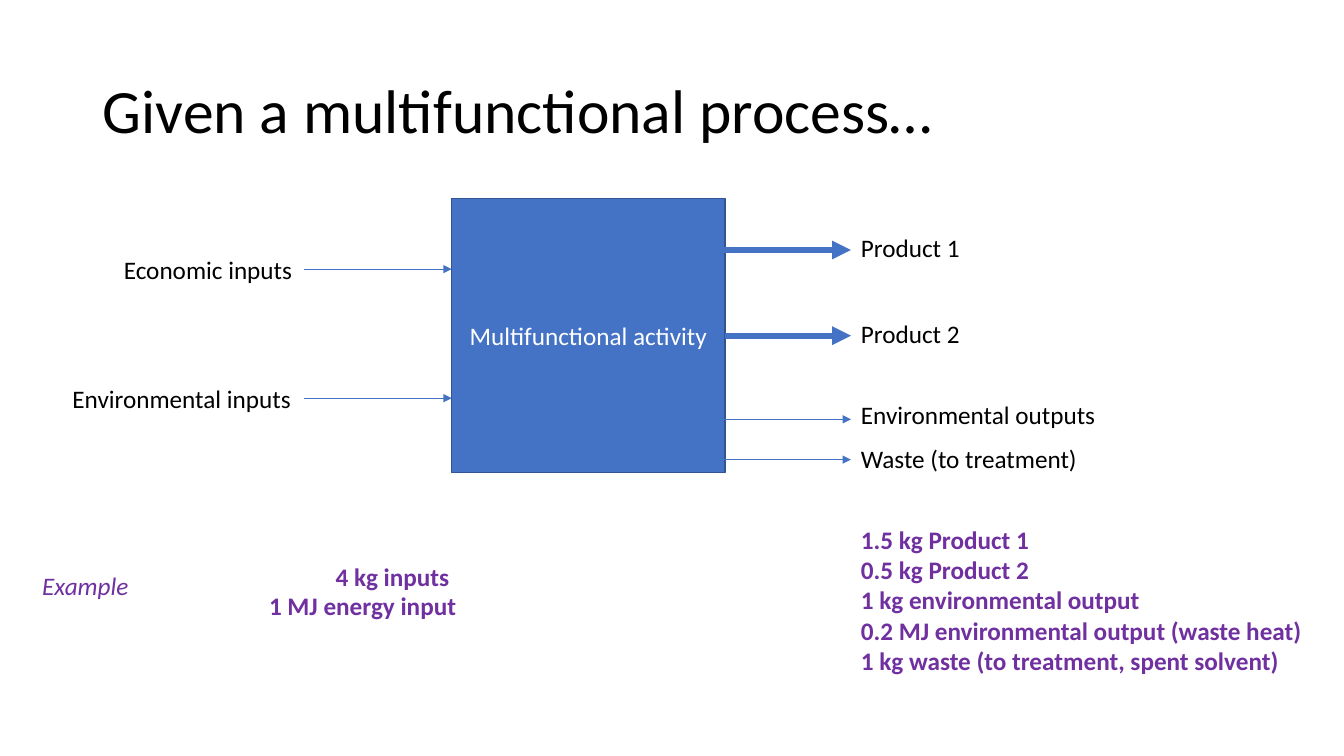
from lxml import etree
from pptx import Presentation
from pptx.dml.color import RGBColor
from pptx.enum.shapes import MSO_CONNECTOR, MSO_SHAPE
from pptx.enum.text import MSO_ANCHOR, MSO_AUTO_SIZE, PP_ALIGN
from pptx.oxml.ns import qn
from pptx.util import Inches, Pt

BLACK = RGBColor(0x00, 0x00, 0x00)
WHITE = RGBColor(0xFF, 0xFF, 0xFF)
BLUE = RGBColor(0x44, 0x72, 0xC4)
DARK_BLUE = RGBColor(0x32, 0x54, 0x91)
PURPLE = RGBColor(0x70, 0x30, 0xA0)
FONT = "Calibri"

prs = Presentation()
prs.slide_width, prs.slide_height = Inches(13.33), Inches(7.5)
s = prs.slides.add_slide(prs.slide_layouts[5])


def set_font(p, color, size=18, bold=False, italic=False):
    f = p.font
    f.name, f.size, f.bold, f.italic = FONT, Pt(size), bold, italic
    f.color.rgb = color


def add_label(lines, x, y, w, color=BLACK, wrap=True, bold=False, italic=False):
    height = 0.4 + 0.305 * (len(lines) - 1)
    tb = s.shapes.add_textbox(Inches(x), Inches(y), Inches(w), Inches(height))
    tf = tb.text_frame
    tf.word_wrap = wrap
    tf.auto_size = MSO_AUTO_SIZE.SHAPE_TO_FIT_TEXT
    tf.text = "\n".join(lines)
    for p in tf.paragraphs:
        set_font(p, color, bold=bold, italic=italic)


# Title
title = s.shapes.title
title.left, title.top = Inches(0.92), Inches(0.4)
title.width, title.height = Inches(11.5), Inches(1.45)
tf = title.text_frame
tf.text = "Given a multifunctional process…"
tf.word_wrap = True
tf.auto_size = MSO_AUTO_SIZE.NONE
tf.vertical_anchor = MSO_ANCHOR.MIDDLE
p = tf.paragraphs[0]
p.alignment = PP_ALIGN.LEFT
p.line_spacing = 0.9
set_font(p, BLACK, size=44)

# Activity box
box = s.shapes.add_shape(MSO_SHAPE.RECTANGLE, Inches(4.48), Inches(1.97),
                         Inches(2.71), Inches(2.72))
box.shadow.inherit = False
box.fill.solid()
box.fill.fore_color.rgb = BLUE
box.line.color.rgb = DARK_BLUE
box.line.width = Pt(1)
tf = box.text_frame
tf.word_wrap = True
tf.vertical_anchor = MSO_ANCHOR.MIDDLE
tf.text = "Multifunctional activity"
p = tf.paragraphs[0]
p.alignment = PP_ALIGN.CENTER
set_font(p, WHITE)

# Flow arrows: inputs on the left, products (thick) and outputs on the right
IN_X, OUT_X = (3.02, 4.48), (7.14, 8.44)
PRODUCT_2_Y = 3.33
flows = [(IN_X, 2.67, 0.5), (IN_X, 3.95, 0.5),
         (OUT_X, 2.48, 4.5), (OUT_X, PRODUCT_2_Y, 4.5),
         (OUT_X, 4.16, 0.5), (OUT_X, 4.56, 0.5)]
for (x1, x2), y, width in flows:
    c = s.shapes.add_connector(MSO_CONNECTOR.STRAIGHT, Inches(x1), Inches(y),
                               Inches(x2), Inches(y))
    if y == PRODUCT_2_Y:
        c.begin_connect(box, 3)
    c.line.color.rgb = BLUE
    c.line.width = Pt(width)
    etree.SubElement(c.line._get_or_add_ln(), qn("a:tailEnd"), type="triangle")
    etree.SubElement(c._element.spPr, qn("a:effectLst"))

# Flow labels
for text, x, y, w, wrap in [
    ("Economic inputs", 1.13, 2.47, 1.89, False),
    ("Environmental inputs", 0.62, 3.75, 2.39, False),
    ("Product 1", 8.44, 2.26, 4.71, True),
    ("Product 2", 8.44, 3.11, 4.71, True),
    ("Environmental outputs", 8.44, 3.91, 2.55, False),
    ("Waste (to treatment)", 8.44, 4.35, 2.37, False),
]:
    add_label([text], x, y, w, wrap=wrap)

# Worked example
add_label(["Example"], 0.32, 5.61, 2.12, PURPLE, italic=True)
add_label(["4 kg inputs"], 3.23, 5.52, 2.12, PURPLE, bold=True)
add_label(["1 MJ energy input"], 2.57, 5.81, 2.4, PURPLE, bold=True)
add_label(["1.5 kg Product 1",
           "0.5 kg Product 2",
           "1 kg environmental output",
           "0.2 MJ environmental output (waste heat)",
           "1 kg waste (to treatment, spent solvent)"],
          8.44, 5.15, 4.71, PURPLE, bold=True)

prs.save("out.pptx")
